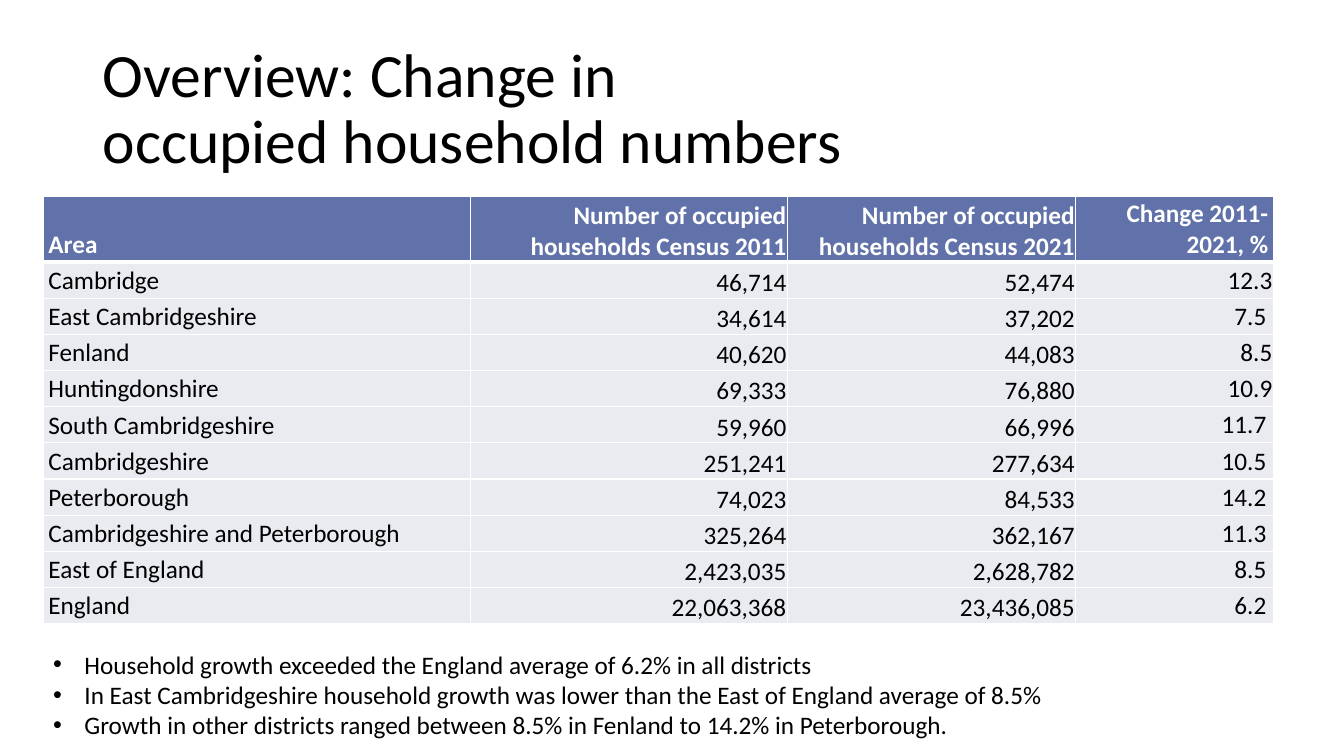
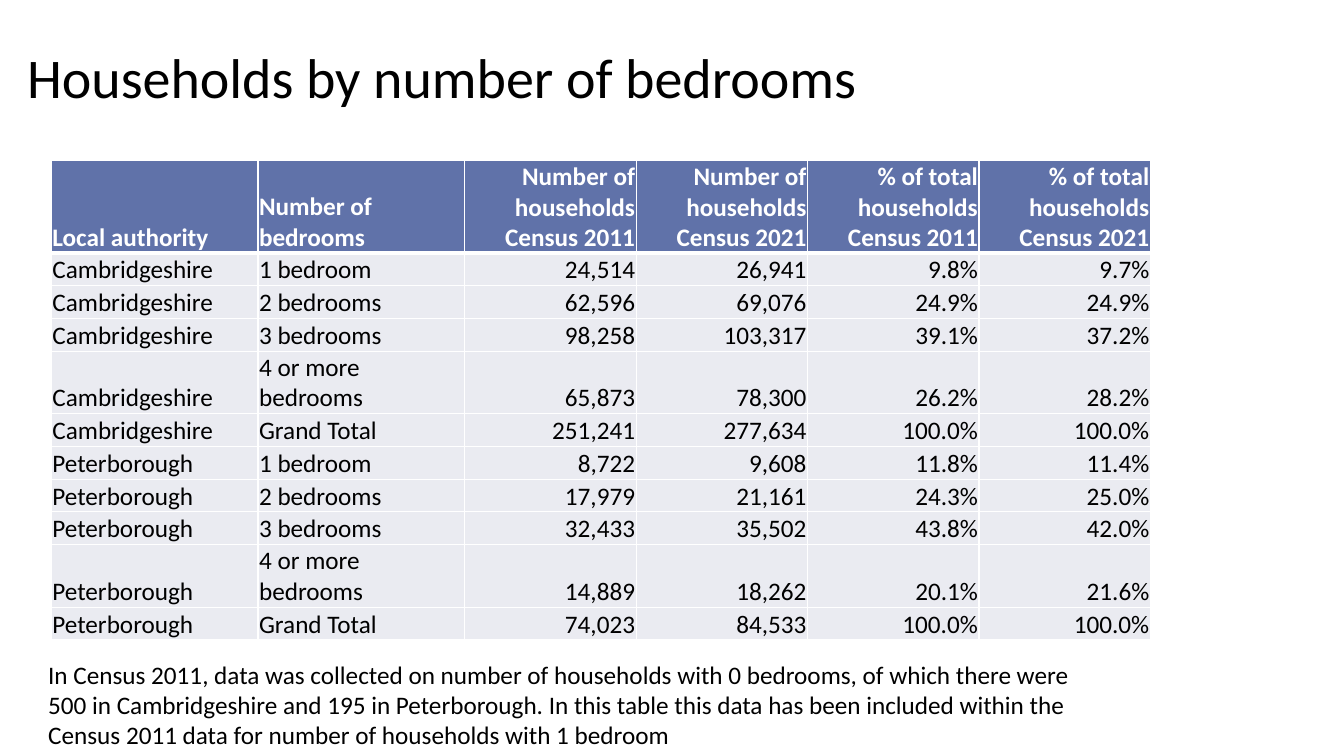
from lxml import etree
from pptx import Presentation
from pptx.dml.color import RGBColor
from pptx.enum import text as te
from pptx.oxml import ns
from pptx.util import Inches, Pt

COLORS = {"text": "000000", "header": "6072A9", "body": "EAEBF1", "white": "FFFFFF"}
FONT = "Calibri"
LEFT, RIGHT = te.PP_ALIGN.LEFT, te.PP_ALIGN.RIGHT
BOTTOM, MIDDLE = te.MSO_ANCHOR.BOTTOM, te.MSO_ANCHOR.MIDDLE
TIGHT = (0.01, 0.01, 0.01, 0)
ROOMY = (0.05, 0.02, 0.05, 0.02)
INDENTED = (0.01, 0.01, 0.07, 0)

HOUSEHOLDS = [
    ("Area", "Number of occupied households Census 2011",
     "Number of occupied households Census 2021", "Change 2011-2021, %"),
    ("Cambridge", "46,714", "52,474", "12.3"),
    ("East Cambridgeshire", "34,614", "37,202", "7.5"),
    ("Fenland", "40,620", "44,083", "8.5"),
    ("Huntingdonshire", "69,333", "76,880", "10.9"),
    ("South Cambridgeshire", "59,960", "66,996", "11.7"),
    ("Cambridgeshire", "251,241", "277,634", "10.5"),
    ("Peterborough", "74,023", "84,533", "14.2"),
    ("Cambridgeshire and Peterborough", "325,264", "362,167", "11.3"),
    ("East of England", "2,423,035", "2,628,782", "8.5"),
    ("England", "22,063,368", "23,436,085", "6.2"),
]
FLUSH_CHANGE_ROWS = (1, 3, 4)

BEDROOM_HEADER = (
    "Local authority", "Number of bedrooms",
    "Number of households Census 2011", "Number of households Census 2021",
    "% of total households\nCensus 2011", "% of total households\nCensus 2021",
)
BEDROOM_SIZES = ("1 bedroom", "2 bedrooms", "3 bedrooms", "4 or more bedrooms", "Grand Total")
BEDROOM_COUNTS = {
    "Cambridgeshire": [
        ("24,514", "26,941", "9.8%", "9.7%"),
        ("62,596", "69,076", "24.9%", "24.9%"),
        ("98,258", "103,317", "39.1%", "37.2%"),
        ("65,873", "78,300", "26.2%", "28.2%"),
        ("251,241", "277,634", "100.0%", "100.0%"),
    ],
    "Peterborough": [
        ("8,722", "9,608", "11.8%", "11.4%"),
        ("17,979", "21,161", "24.3%", "25.0%"),
        ("32,433", "35,502", "43.8%", "42.0%"),
        ("14,889", "18,262", "20.1%", "21.6%"),
        ("74,023", "84,533", "100.0%", "100.0%"),
    ],
}


def rgb(name):
    return RGBColor.from_string(COLORS[name])


def write_text(frame, content, *, size=18, color="text", bold=False, align=LEFT,
               line_spacing=None, bullet=None):
    """Fill a text frame, one paragraph for each line of content."""
    for index, line in enumerate(content.split("\n")):
        paragraph = frame.add_paragraph() if index else frame.paragraphs[0]
        if bullet:
            add_bullet(paragraph, bullet)
        paragraph.alignment = align
        if line_spacing:
            paragraph.line_spacing = line_spacing
        run = paragraph.add_run()
        run.text = line
        run.font.name, run.font.size, run.font.bold = FONT, Pt(size), bold
        run.font.color.rgb = rgb(color)


def add_bullet(paragraph, symbol, indent=0.31):
    properties = paragraph._p.get_or_add_pPr()
    properties.set("marL", str(Inches(indent)))
    properties.set("indent", str(-Inches(indent)))
    etree.SubElement(properties, ns.qn("a:buFont"), typeface="Arial")
    etree.SubElement(properties, ns.qn("a:buChar"), char=symbol)


def add_text_box(slide, box, content, *, anchor=te.MSO_ANCHOR.TOP, **text_format):
    frame = slide.shapes.add_textbox(*map(Inches, box)).text_frame
    frame.word_wrap = True
    frame.vertical_anchor = anchor
    write_text(frame, content, **text_format)


def add_title(slide, box, content, size):
    add_text_box(slide, box, content, size=size, anchor=MIDDLE, line_spacing=0.9)


def set_borders(cell, top, bottom):
    """Draw white cell borders; top and bottom are widths in points."""
    properties = cell._tc.get_or_add_tcPr()
    for side, width in (("L", 1), ("R", 1), ("T", top), ("B", bottom)):
        line = etree.SubElement(properties, ns.qn(f"a:ln{side}"), w=str(Pt(width)))
        fill = etree.SubElement(line, ns.qn("a:solidFill"))
        etree.SubElement(fill, ns.qn("a:srgbClr"), val=COLORS["white"])


def add_data_table(slide, origin, rows, widths, height, tall_rows, label_columns, cell_layout):
    """Add a table whose rows share the height that tall_rows leave.

    cell_layout(row, column) gives the insets and the anchor of a cell.
    """
    table = slide.shapes.add_table(
        len(rows), len(widths), *map(Inches, (*origin, sum(widths), height))).table
    table.horz_banding = False
    for column, width in zip(table.columns, widths):
        column.width = Inches(width)
    plain_height = (height - sum(tall_rows.values())) / (len(rows) - len(tall_rows))
    for r, values in enumerate(rows):
        table.rows[r].height = Inches(tall_rows.get(r, plain_height))
        header = r == 0
        for c, value in enumerate(values):
            cell = table.cell(r, c)
            insets, cell.vertical_anchor = cell_layout(r, c)
            (cell.margin_left, cell.margin_top,
             cell.margin_right, cell.margin_bottom) = map(Inches, insets)
            set_borders(cell, top=3 if r == 1 else 1, bottom=3 if header else 1)
            cell.fill.solid()
            cell.fill.fore_color.rgb = rgb("header" if header else "body")
            write_text(cell.text_frame, value, bold=header,
                       color="white" if header else "text",
                       align=LEFT if c < label_columns else RIGHT)


def household_cell_layout(row, column):
    if column == 0 or (row == 0 and column == 3):
        return ROOMY, BOTTOM
    if column == 3:
        return (TIGHT if row in FLUSH_CHANGE_ROWS else INDENTED), MIDDLE
    return TIGHT, BOTTOM


def build_household_slide(slide):
    add_title(slide, (0.92, 0.34, 7.58, 1.51),
              "Overview: Change in occupied household numbers", 44)
    add_data_table(slide, (0.43, 1.95), HOUSEHOLDS, (4.24, 3.14, 2.86, 1.96), 4.24,
                   {0: 0.65}, 1, household_cell_layout)
    add_text_box(
        slide, (0.43, 6.39, 10.13, 1.01),
        "Household growth exceeded the England average of 6.2% in all districts\n"
        "In East Cambridgeshire household growth was lower than the East of England"
        " average of 8.5%\n"
        "Growth in other districts ranged between 8.5% in Fenland to 14.2% in Peterborough.",
        bullet="•")


def build_bedroom_slide(slide):
    rows = [BEDROOM_HEADER] + [
        (authority, size, *counts)
        for authority, groups in BEDROOM_COUNTS.items()
        for size, counts in zip(BEDROOM_SIZES, groups)]
    add_title(slide, (0.17, 0.19, 8.61, 1.21), "Households by number of bedrooms", 40)
    add_data_table(slide, (0.51, 1.59), rows, [2.05] * 2 + [1.7] * 4, 4.76,
                   {0: 0.92, 4: 0.62, 9: 0.62}, 2, lambda row, column: (TIGHT, BOTTOM))
    add_text_box(
        slide, (0.38, 6.49, 10.53, 1.01),
        "In Census 2011, data was collected on number of households with 0 bedrooms,"
        " of which there were\n"
        "500 in Cambridgeshire and 195 in Peterborough. In this table this data has been"
        " included within the\n"
        "Census 2011 data for number of households with 1 bedroom")


def main():
    deck = Presentation()
    deck.slide_width, deck.slide_height = Inches(13.33), Inches(7.5)
    for build in (build_household_slide, build_bedroom_slide):
        build(deck.slides.add_slide(deck.slide_layouts[6]))
    deck.save("out.pptx")


if __name__ == "__main__":
    main()
